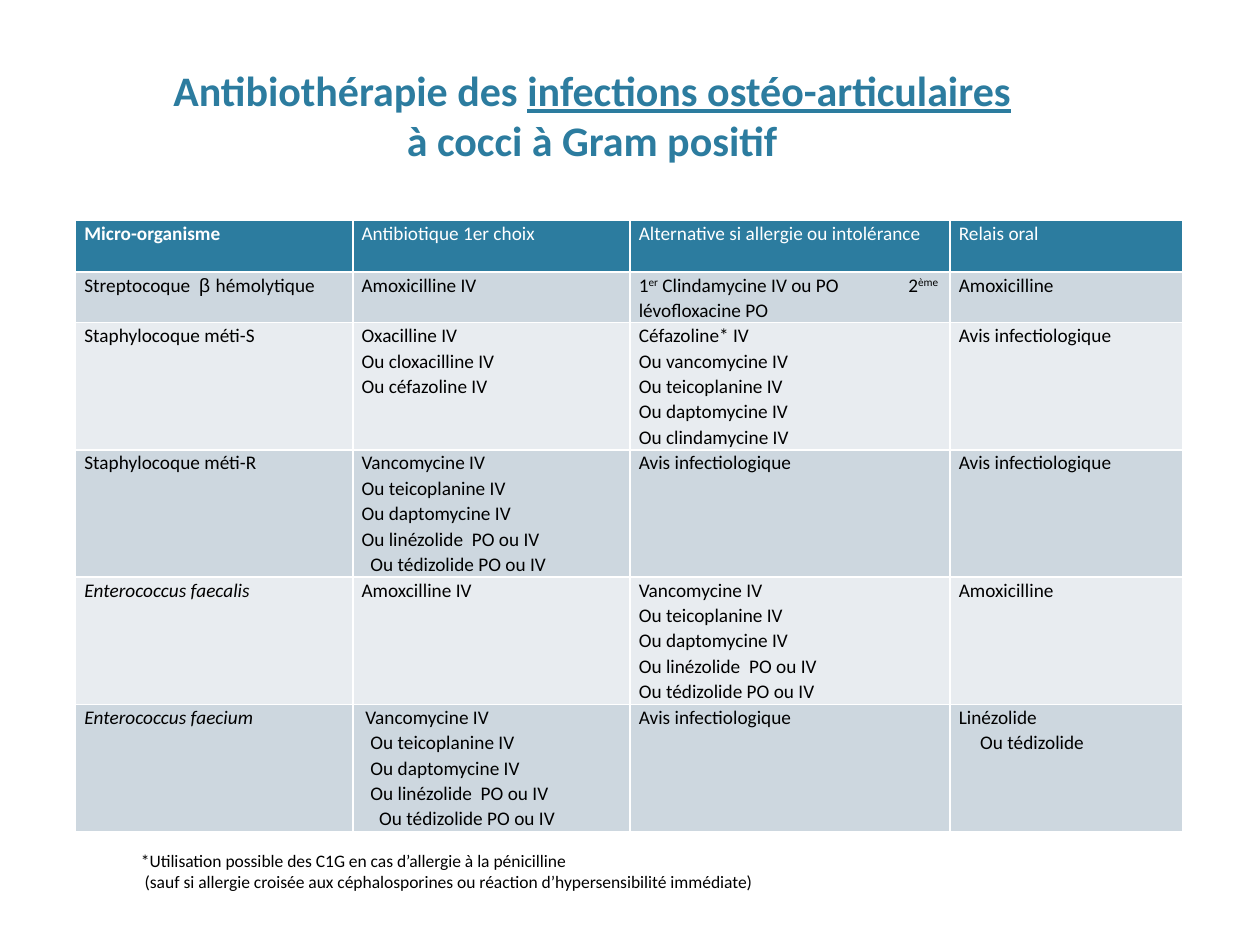
from lxml.etree import SubElement
from pptx import Presentation
from pptx.dml.color import RGBColor
from pptx.enum.text import MSO_ANCHOR, PP_ALIGN
from pptx.oxml.ns import qn
from pptx.util import Inches, Pt

TEAL = RGBColor(0x2C, 0x7C, 0x9F)
BLUE_GREY = RGBColor(0xCD, 0xD7, 0xDF)
PALE_GREY = RGBColor(0xE8, 0xEC, 0xF0)
WHITE = RGBColor(0xFF, 0xFF, 0xFF)
BLACK = RGBColor(0, 0, 0)
FONT = "Calibri"

TITLE = [
    [("Antibiothérapie des ", ""), ("infections ostéo-articulaires", "underline")],
    [("à cocci à Gram positif", "")],
]
HEADINGS = ["Micro-organisme", "Antibiotique 1er choix",
            "Alternative si allergie ou intolérance", "Relais oral"]
STREPTOCOCCUS = [("Streptocoque  ", ""), ("β ", "greek"), ("hémolytique", "")]
CLINDAMYCIN = [("1", ""), ("er", "super"), (" Clindamycine IV ou PO\t2", ""), ("ème", "super")]
ADVICE = ["Avis infectiologique"]
GLYCOPEPTIDES = ["Vancomycine IV", "Ou teicoplanine IV", "Ou daptomycine IV",
                 "Ou linézolide  PO ou IV", "Ou tédizolide PO ou IV"]
TREATMENTS = [
    [[STREPTOCOCCUS], ["Amoxicilline IV"], [CLINDAMYCIN, "lévofloxacine PO"], ["Amoxicilline"]],
    [["Staphylocoque méti-S"],
     ["Oxacilline IV", "Ou cloxacilline IV", "Ou céfazoline IV"],
     ["Céfazoline* IV", "Ou vancomycine IV", "Ou teicoplanine IV",
      "Ou daptomycine IV", "Ou clindamycine IV"],
     ADVICE],
    [["Staphylocoque méti-R"], GLYCOPEPTIDES, ADVICE, ADVICE],
    [[[("Enterococcus faecalis", "italic")]], ["Amoxcilline IV"], GLYCOPEPTIDES, ["Amoxicilline"]],
    [[[("Enterococcus faecium", "italic")]], GLYCOPEPTIDES, ADVICE, ["Linézolide", "Ou tédizolide"]],
]
INDENTS = {
    (3, 1): [0, 0, 0, 0, 0.07],
    (5, 1): [0.03, 0.07, 0.07, 0.07, 0.14],
    (5, 3): [0, 0.17],
}
FOOTNOTE = ["*Utilisation possible des C1G en cas d’allergie à la pénicilline",
            "(sauf si allergie croisée aux céphalosporines ou réaction d’hypersensibilité immédiate)"]

LEFT = 0.6
COLUMN_WIDTHS = [2.2, 2.2, 2.54, 1.85]
ROW_HEIGHTS = [0.41, 0.4] + [1.01] * 4
SECOND_CHOICE_TAB = 2.14


def write_lines(frame, lines, size, color, bold=False, indents=None):
    for index, line in enumerate(lines):
        paragraph = frame.paragraphs[0] if index == 0 else frame.add_paragraph()
        pieces = [(line, "")] if isinstance(line, str) else line
        for text, style in pieces:
            run = paragraph.add_run()
            run.text = text
            font = run.font
            font.name = "Arial" if style == "greek" else FONT
            font.size, font.bold, font.color.rgb = Pt(size), bold, color
            font.italic = style == "italic"
            font.underline = style == "underline"
            if style == "super":
                font._element.set("baseline", "30000")
        if indents and indents[index]:
            paragraph._p.get_or_add_pPr().set("marL", str(Inches(indents[index])))


def add_text(slide, left, top, width, height, lines, size, color, **options):
    frame = slide.shapes.add_textbox(*map(Inches, (left, top, width, height))).text_frame
    frame.word_wrap = True
    write_lines(frame, lines, size, color, **options)
    return frame


def add_treatment_table(slide):
    table = slide.shapes.add_table(
        len(ROW_HEIGHTS), len(COLUMN_WIDTHS), Inches(LEFT), Inches(1.75),
        Inches(sum(COLUMN_WIDTHS)), Inches(sum(ROW_HEIGHTS))).table
    for column, width in zip(table.columns, COLUMN_WIDTHS):
        column.width = Inches(width)
    rows = [[[heading] for heading in HEADINGS]] + TREATMENTS
    for r, row in enumerate(rows):
        table.rows[r].height = Inches(ROW_HEIGHTS[r])
        for c, lines in enumerate(row):
            cell = table.cell(r, c)
            cell.margin_left = cell.margin_right = Inches(0.07)
            cell.margin_top = cell.margin_bottom = 0
            cell.fill.solid()
            cell.fill.fore_color.rgb = TEAL if r == 0 else BLUE_GREY if r % 2 else PALE_GREY
            write_lines(cell.text_frame, lines, 11, BLACK if r else WHITE,
                        bold=r == c == 0, indents=INDENTS.get((r, c)))
            for paragraph in cell.text_frame.paragraphs:
                paragraph.line_spacing = 1.07
                if "\t" in paragraph.text:
                    tabs = SubElement(paragraph._p.get_or_add_pPr(), qn("a:tabLst"))
                    SubElement(tabs, qn("a:tab"), pos=str(Inches(SECOND_CHOICE_TAB)), algn="l")


def main():
    deck = Presentation()
    deck.slide_width, deck.slide_height = Inches(10), Inches(7.5)
    slide = deck.slides.add_slide(deck.slide_layouts[6])

    title = add_text(slide, LEFT, 0.12, 8.2, 1.24, TITLE, 24, TEAL, bold=True)
    title.vertical_anchor = MSO_ANCHOR.BOTTOM
    for paragraph in title.paragraphs:
        paragraph.alignment = PP_ALIGN.CENTER

    add_treatment_table(slide)
    add_text(slide, 1.02, 6.7, 6.02, 0.74, FOOTNOTE, 10, BLACK, indents=[0, 0.03])
    deck.save("out.pptx")


if __name__ == "__main__":
    main()
